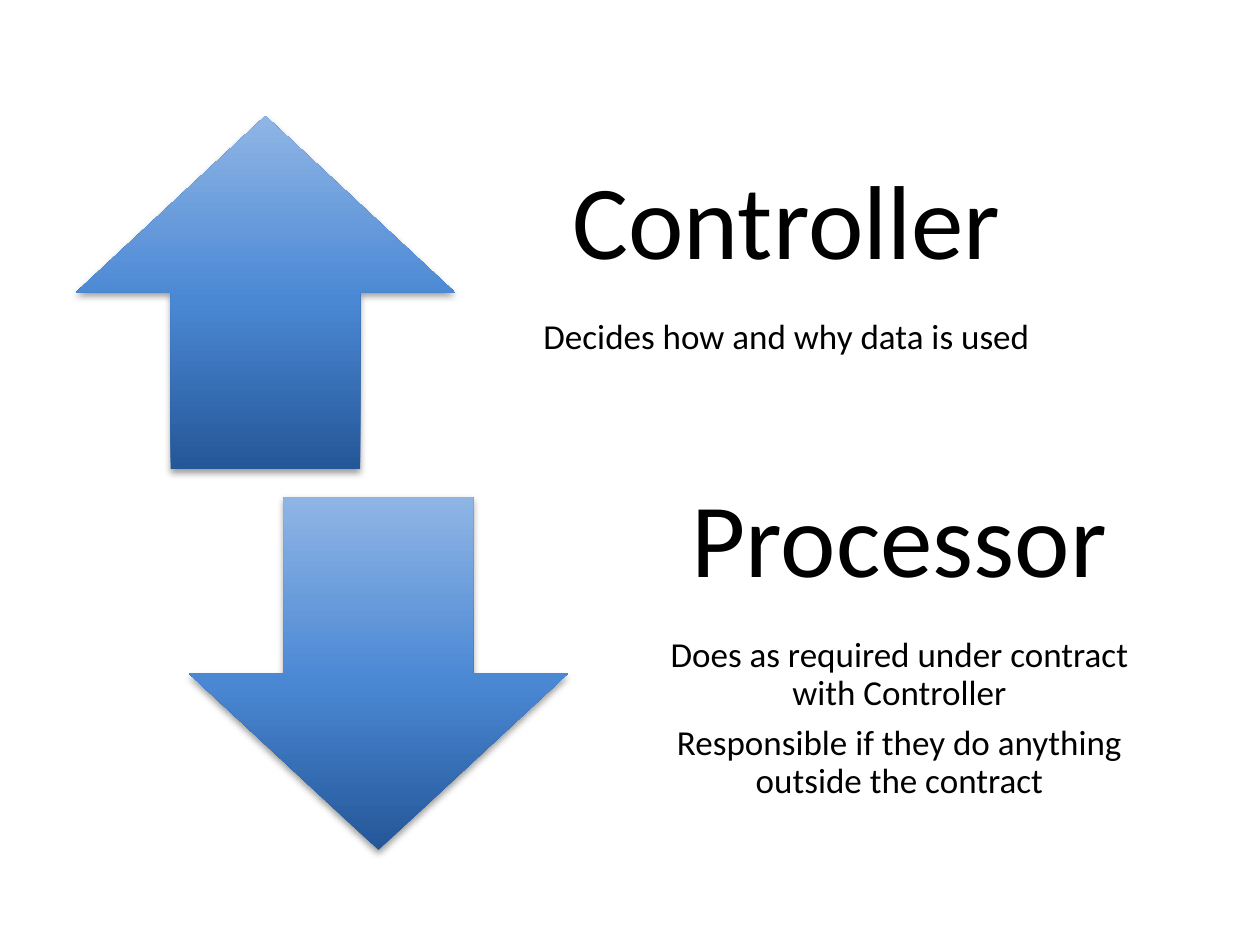
from lxml import etree
from pptx import Presentation
from pptx.dml.color import RGBColor
from pptx.enum.shapes import MSO_SHAPE
from pptx.enum.text import MSO_ANCHOR, PP_ALIGN
from pptx.oxml import parse_xml
from pptx.oxml.ns import nsdecls, qn
from pptx.util import Pt

PX = 914400 // 126
COLORS = {"dark": "245798", "mid": "4B88D4", "light": "8FB5E5", "text": "000000"}
STOPS = [(0, "dark"), (48, "mid"), (100, "light")]
ARROW_W, ROW_H, TEXT_W, INSET = 379, 353, 643, 59
TEXT_OFFSET = 389

ROLES = [
    (MSO_SHAPE.UP_ARROW, 76, 116, ["Controller", "Decides how and why data is used"]),
    (MSO_SHAPE.DOWN_ARROW, 189, 497, [
        "Processor",
        "Does as required under contract with Controller",
        "Responsible if they do anything outside the contract",
    ]),
]


def style_arrow(sp):
    sp.line.fill.background()
    sp.fill.gradient()
    sp.fill.gradient_angle = 90
    gs_lst = sp._element.spPr.find(qn("a:gradFill")).find(qn("a:gsLst"))
    for gs in list(gs_lst):
        gs_lst.remove(gs)
    for pos, name in STOPS:
        gs = etree.SubElement(gs_lst, qn("a:gs"), pos=str(pos * 1000))
        etree.SubElement(gs, qn("a:srgbClr"), val=COLORS[name])
    sp.shadow.inherit = False
    sp._element.spPr.find(qn("a:effectLst")).append(parse_xml(
        f'<a:outerShdw {nsdecls("a")} blurRad="{Pt(4)}" dist="{Pt(2)}" dir="5400000" rotWithShape="0">'
        '<a:srgbClr val="000000"><a:alpha val="38000"/></a:srgbClr></a:outerShdw>'))


prs = Presentation()
prs.slide_width, prs.slide_height = 1260 * PX, 945 * PX
s = prs.slides.add_slide(prs.slide_layouts[6])

for preset, left, top, lines in ROLES:
    sp = s.shapes.add_shape(preset, left * PX, top * PX, ARROW_W * PX, ROW_H * PX)
    style_arrow(sp)

    box = s.shapes.add_textbox((left + TEXT_OFFSET) * PX, top * PX, TEXT_W * PX, ROW_H * PX)
    tf = box.text_frame
    tf.word_wrap = True
    tf.vertical_anchor = MSO_ANCHOR.MIDDLE
    tf.margin_left = tf.margin_right = tf.margin_bottom = INSET * PX
    tf.margin_top = 0
    tf.text = "\n".join(lines)
    for i, p in enumerate(tf.paragraphs):
        p.alignment = PP_ALIGN.CENTER
        p.line_spacing = 0.9
        after = etree.SubElement(p._p.get_or_add_pPr(), qn("a:spcAft"))
        etree.SubElement(after, qn("a:spcPct"), val="35000")
        font = p.runs[0].font
        font.name = "Calibri"
        font.size = Pt(20 if i else 60)
        font.color.rgb = RGBColor.from_string(COLORS["text"])

prs.save("out.pptx")
